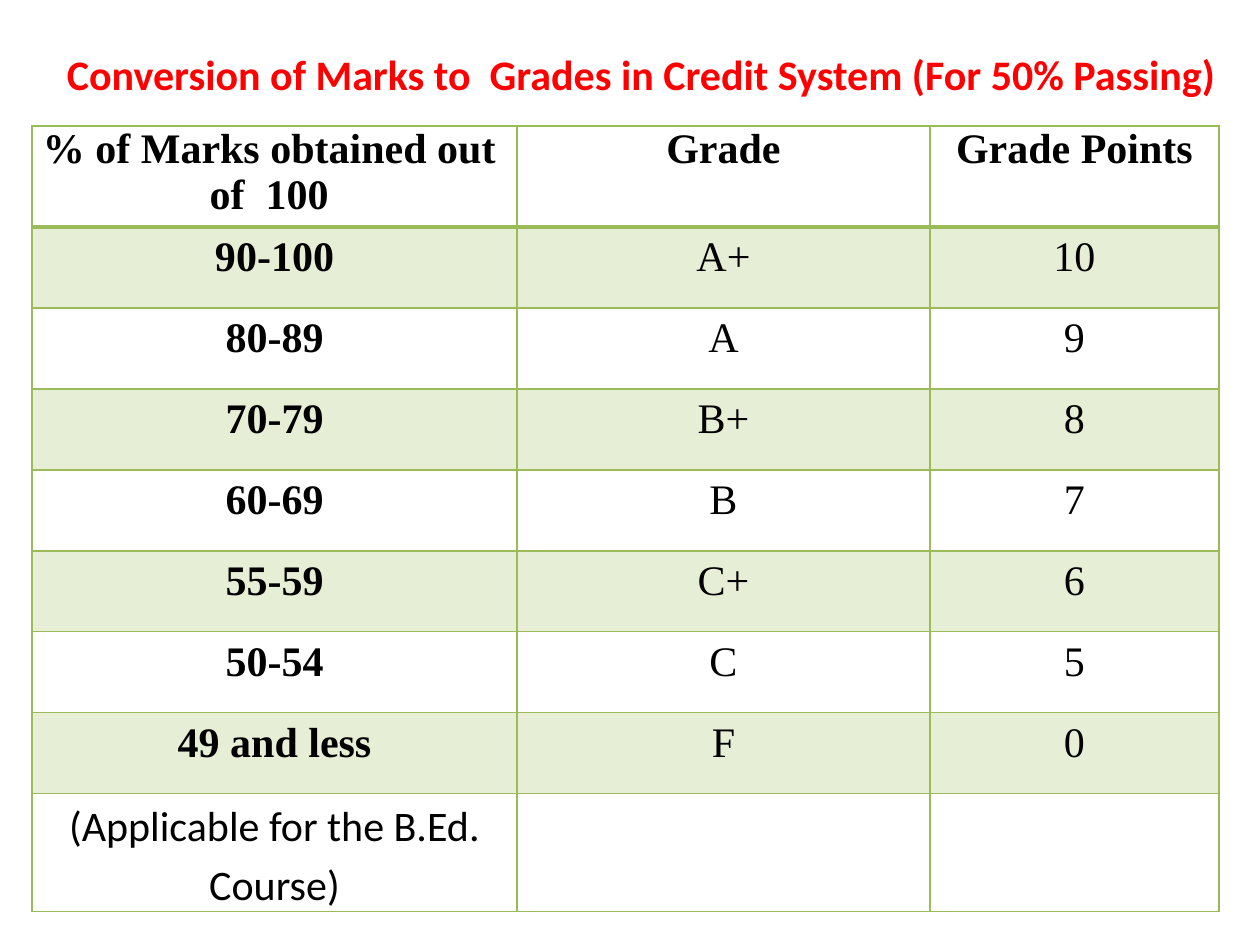
from lxml.etree import SubElement
from pptx import Presentation
from pptx.dml.color import RGBColor
from pptx.enum.text import PP_ALIGN
from pptx.oxml.ns import qn
from pptx.util import Emu, Pt

PX = 914400 // 126
TITLE = "Conversion of Marks to  Grades in Credit System (For 50% Passing) "
GRADES = [
    ("% of Marks obtained out  of  100 ", "Grade", "Grade Points"),
    ("90-100", "A+", "10"),
    ("80-89", "A", "9"),
    ("70-79", "B+", "8"),
    ("60-69", "B", "7"),
    ("55-59", "C+", "6"),
    ("50-54", "C", "5"),
    ("49 and less", "F", "0"),
    ("(Applicable for the B.Ed. Course)", "", ""),
]
COLUMN_WIDTHS = [485, 413, 289]
ROW_HEIGHTS = [101] + [81] * 7 + [116]
LAST = len(GRADES) - 1
GREEN, BAND, BLACK, RED = "9BBB59", "E6EED5", "000000", "FF0000"


def px(length):
    return Emu(length * PX)


def color(value):
    return RGBColor.from_string(value)


def format_text(paragraph, font_name, ink, bold):
    paragraph.alignment = PP_ALIGN.CENTER
    for run in paragraph.runs:
        run.font.name = font_name
        run.font.size = Pt(24)
        run.font.bold = bold
        run.font.color.rgb = color(ink)


def add_borders(cell, top, bottom):
    properties = cell._tc.get_or_add_tcPr()
    for side, width in (("L", 1), ("R", 1), ("T", top), ("B", bottom)):
        border = SubElement(properties, qn(f"a:ln{side}"), w=str(Pt(width)))
        SubElement(SubElement(border, qn("a:solidFill")), qn("a:srgbClr"), val=GREEN)


def fill_cell(cell, text, row, column):
    cell.margin_left = cell.margin_right = px(9)
    cell.margin_top = cell.margin_bottom = 0
    add_borders(cell, 2.25 if row == 1 else 1, 2.25 if row == 0 else 1)
    if row % 2:
        cell.fill.solid()
        cell.fill.fore_color.rgb = color(BAND)
    else:
        cell.fill.background()
    paragraph = cell.text_frame.paragraphs[0]
    paragraph.text = text
    if row:
        paragraph.line_spacing = 1.15
    font_name = "Calibri" if row == LAST else "Times New Roman"
    bold = row == 0 or (column == 0 and row < LAST)
    format_text(paragraph, font_name, BLACK, bold)


def main():
    presentation = Presentation()
    presentation.slide_width, presentation.slide_height = px(1260), px(945)
    slide = presentation.slides.add_slide(presentation.slide_layouts[6])

    grade_table = slide.shapes.add_table(
        len(GRADES), len(COLUMN_WIDTHS), px(32), px(126),
        px(sum(COLUMN_WIDTHS)), px(sum(ROW_HEIGHTS)),
    ).table
    grade_table.first_row = grade_table.horz_banding = False
    for column, width in enumerate(COLUMN_WIDTHS):
        grade_table.columns[column].width = px(width)
    for row, (height, texts) in enumerate(zip(ROW_HEIGHTS, GRADES)):
        grade_table.rows[row].height = px(height)
        for column, text in enumerate(texts):
            fill_cell(grade_table.cell(row, column), text, row, column)

    title = slide.shapes.add_textbox(px(32), px(42), px(1228), px(63)).text_frame
    title.word_wrap = True
    title.text = TITLE
    format_text(title.paragraphs[0], "Calibri", RED, True)

    presentation.save("out.pptx")


if __name__ == "__main__":
    main()
